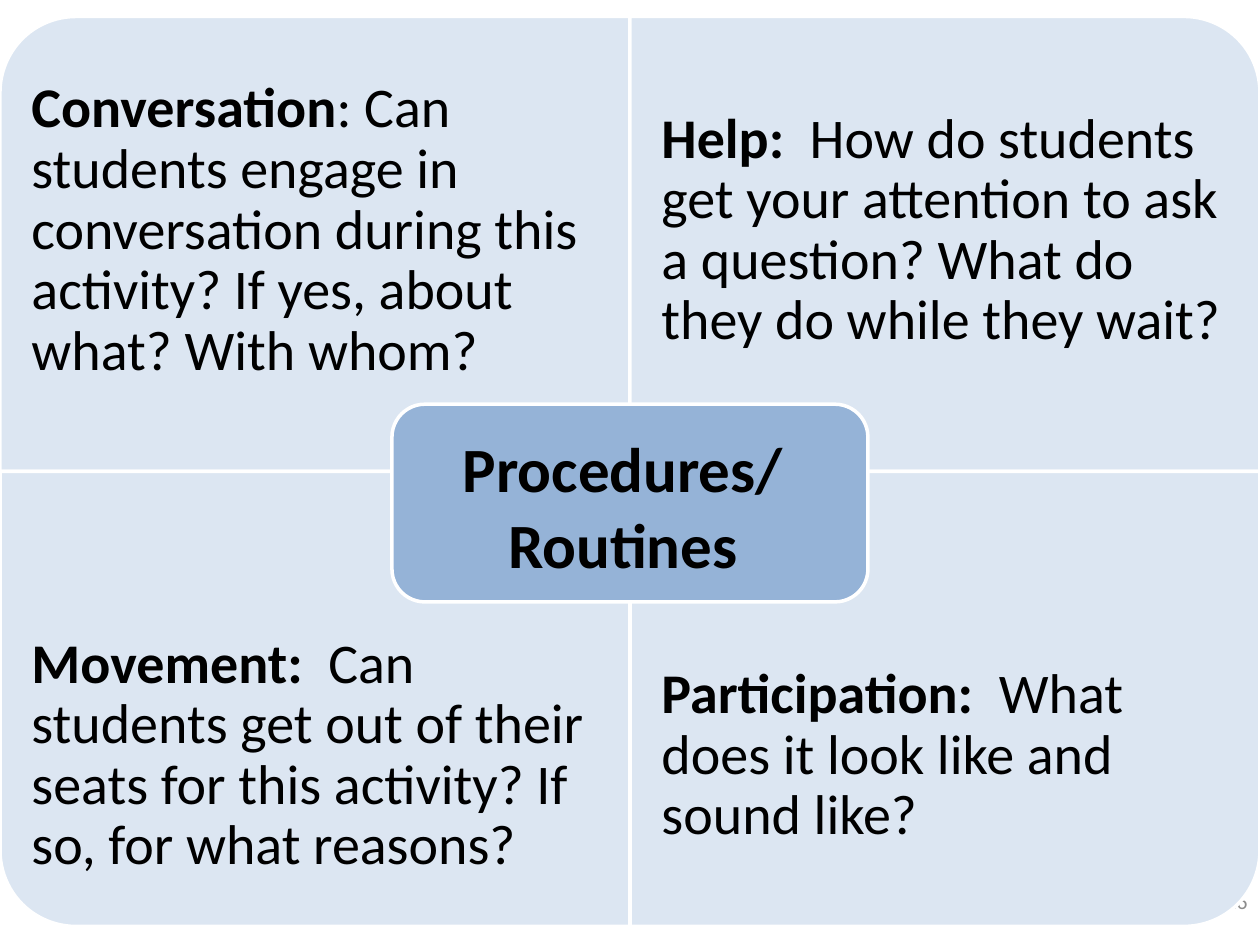
import dataclasses

import pptx
import pptx.dml.color
import pptx.enum.shapes
import pptx.enum.text
import pptx.util

Pt = pptx.util.Pt
RGB = pptx.dml.color.RGBColor
Shape = pptx.enum.shapes.MSO_SHAPE
Align = pptx.enum.text.PP_ALIGN
Anchor = pptx.enum.text.MSO_ANCHOR


@dataclasses.dataclass(frozen=True)
class Theme:
    font: str = "Calibri"
    ink: RGB = RGB(0, 0, 0)
    gray: RGB = RGB(0x8C, 0x8C, 0x8C)
    pale: RGB = RGB(0xDC, 0xE6, 0xF2)
    blue: RGB = RGB(0x95, 0xB3, 0xD7)
    white: RGB = RGB(255, 255, 255)
    line: float = 2
    body: float = 32
    title: float = 36
    small: float = 12


@dataclasses.dataclass(frozen=True)
class Box:
    left: float
    top: float
    width: float
    height: float

    def turned(self):
        shift = (self.width - self.height) / 2
        return Box(self.left + shift, self.top - shift, self.height, self.width)

    def points(self):
        return [Pt(side) for side in dataclasses.astuple(self)]


@dataclasses.dataclass(frozen=True)
class Panel:
    head: str
    body: str
    col: int
    row: int
    angle: int


THEME = Theme()
WIDE, HIGH = 720, 540
CELL_W, CELL_H, TOP = 360, 260, 9.4
TEXT_H = 195
INSET = 18
DROP = 50

PANELS = [
    Panel("Conversation", ": Can students engage in conversation during this "
          "activity? If yes, about what? With whom?", 0, 0, 270),
    Panel("Help:", "  How do students get your attention to ask a question? "
          "What do they do while they wait?", 1, 0, 0),
    Panel("Movement:", "  Can students get out of their seats for this "
          "activity? If so, for what reasons?", 0, 1, 180),
    Panel("Participation:", "  What does it look like and sound like?", 1, 1, 90),
]


def add_block(slide, kind: Shape, box: Box, fill: RGB, angle: int = 0) -> None:
    block = slide.shapes.add_shape(kind, *box.points())
    block.rotation = angle
    block.shadow.inherit = False
    block.fill.solid()
    block.fill.fore_color.rgb = fill
    block.line.color.rgb = THEME.white
    block.line.width = Pt(THEME.line)


def add_text(slide, box: Box, text: str, size: float, color: RGB, align: Align):
    frame = slide.shapes.add_textbox(*box.points()).text_frame
    frame.word_wrap = True
    para = frame.paragraphs[0]
    para.alignment = align
    para.font.name = THEME.font
    para.font.size = Pt(size)
    para.font.color.rgb = color
    para.add_run().text = text
    return frame


def add_panel(slide, panel: Panel) -> None:
    cell = Box(panel.col * CELL_W, TOP + panel.row * CELL_H, CELL_W, CELL_H)
    shape = cell.turned() if panel.angle % 180 else cell
    add_block(slide, Shape.ROUND_1_RECTANGLE, shape, THEME.pale, panel.angle)

    top = cell.top + panel.row * (CELL_H - TEXT_H)
    area = Box(cell.left, top, CELL_W, TEXT_H)
    frame = add_text(slide, area, panel.head, THEME.body, THEME.ink, Align.LEFT)
    frame.vertical_anchor = Anchor.MIDDLE
    frame.margin_left = frame.margin_right = Pt(INSET)
    frame.margin_top = Pt(INSET if panel.row else DROP)
    frame.margin_bottom = Pt(INSET if panel.row else 0)
    para = frame.paragraphs[0]
    para.line_spacing = 0.9
    para.runs[0].font.bold = True
    para.add_run().text = panel.body


def main() -> None:
    deck = pptx.Presentation()
    deck.slide_width, deck.slide_height = Pt(WIDE), Pt(HIGH)
    slide = deck.slides.add_slide(deck.slide_layouts[6])

    page = add_text(slide, Box(552, 500.4, 168, 28.8), "16",
                    THEME.small, THEME.gray, Align.RIGHT)
    page.vertical_anchor = Anchor.MIDDLE

    for panel in PANELS:
        add_panel(slide, panel)

    add_block(slide, Shape.ROUNDED_RECTANGLE, Box(224, 231, 272, 113), THEME.blue)
    title = add_text(slide, Box(216, 242, 280, 94.4), "Procedures/Routines",
                     THEME.title, THEME.ink, Align.CENTER)
    title.auto_size = pptx.enum.text.MSO_AUTO_SIZE.SHAPE_TO_FIT_TEXT
    title.paragraphs[0].font.bold = True

    deck.save("out.pptx")


if __name__ == "__main__":
    main()
